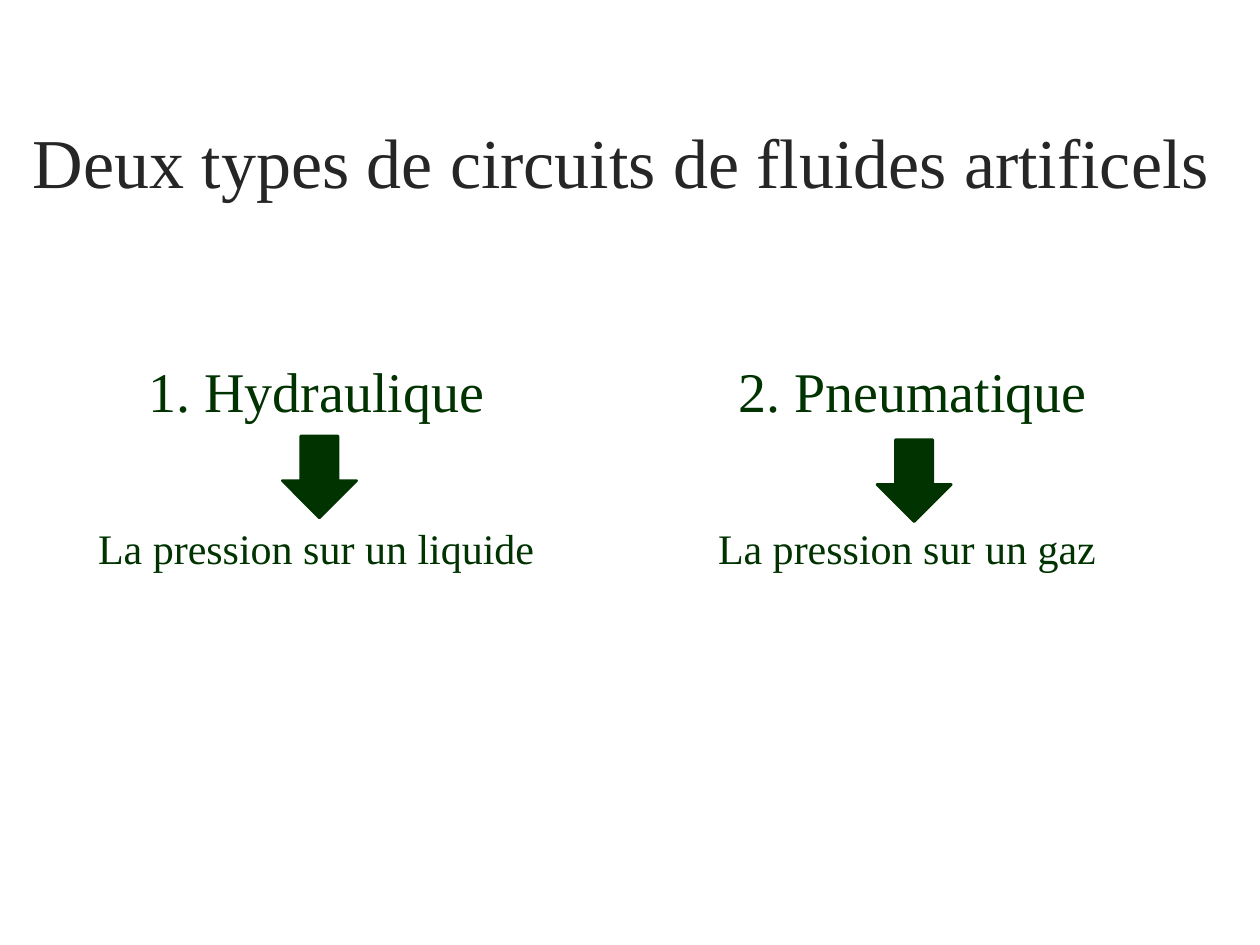
import pptx
import pptx.dml.color
import pptx.enum.shapes
import pptx.enum.text
import pptx.util

Inches = pptx.util.Inches
Pt = pptx.util.Pt
COLORS = {"title": "262626", "green": "003300"}
FONT = "Times New Roman"


def color(name):
    return pptx.dml.color.RGBColor.from_string(COLORS[name])


def add_run(para, text, size, tone):
    run = para.add_run()
    run.text = text
    run.font.name = FONT
    run.font.size = Pt(size)
    run.font.color.rgb = color(tone)


def add_title(slide, box, text):
    title = slide.shapes.title
    title.left, title.top, title.width, title.height = map(Inches, box)
    frame = title.text_frame
    frame.word_wrap = True
    frame.auto_size = pptx.enum.text.MSO_AUTO_SIZE.NONE
    frame.vertical_anchor = pptx.enum.text.MSO_ANCHOR.MIDDLE
    para = frame.paragraphs[0]
    para.alignment = pptx.enum.text.PP_ALIGN.CENTER
    add_run(para, text, 40, "title")


def add_label(slide, box, text, size):
    frame = slide.shapes.add_textbox(*map(Inches, box)).text_frame
    frame.word_wrap = False
    frame.auto_size = pptx.enum.text.MSO_AUTO_SIZE.SHAPE_TO_FIT_TEXT
    para = frame.paragraphs[0]
    para.alignment = pptx.enum.text.PP_ALIGN.LEFT
    add_run(para, text, size, "green")


def add_arrow(slide, box):
    kind = pptx.enum.shapes.MSO_SHAPE.DOWN_ARROW
    arrow = slide.shapes.add_shape(kind, *map(Inches, box))
    arrow.shadow.inherit = False
    arrow.fill.solid()
    arrow.fill.fore_color.rgb = color("green")
    arrow.line.color.rgb = color("green")
    arrow.line.width = Pt(1.5)


def add_type(slide, box, head, note, indent, shift, drop):
    left, top, width, height = box
    head_text, head_width = head
    add_label(slide, (left + indent, top, head_width, 0.64), head_text, 32)
    add_arrow(slide, (left + shift, top + drop, 0.59, 0.65))
    add_label(slide, (left, top + height - 0.5, width, 0.5), note, 24)


def main():
    deck = pptx.Presentation()
    deck.slide_width = Inches(10)
    deck.slide_height = Inches(7.5)
    slide = deck.slides.add_slide(deck.slide_layouts[5])
    add_title(slide, (0, 0.48, 9.86, 1.58),
              "Deux types de circuits de fluides artificels")
    add_type(slide, (0.68, 2.78, 3.7, 1.82), ("1. Hydraulique", 2.89),
             "La pression sur un liquide", 0.4, 1.56, 0.68)
    add_type(slide, (5.6, 2.78, 3.31, 1.82), ("2. Pneumatique", 2.99),
             "La pression sur un gaz", 0.16, 1.36, 0.71)
    deck.save("out.pptx")


if __name__ == "__main__":
    main()
